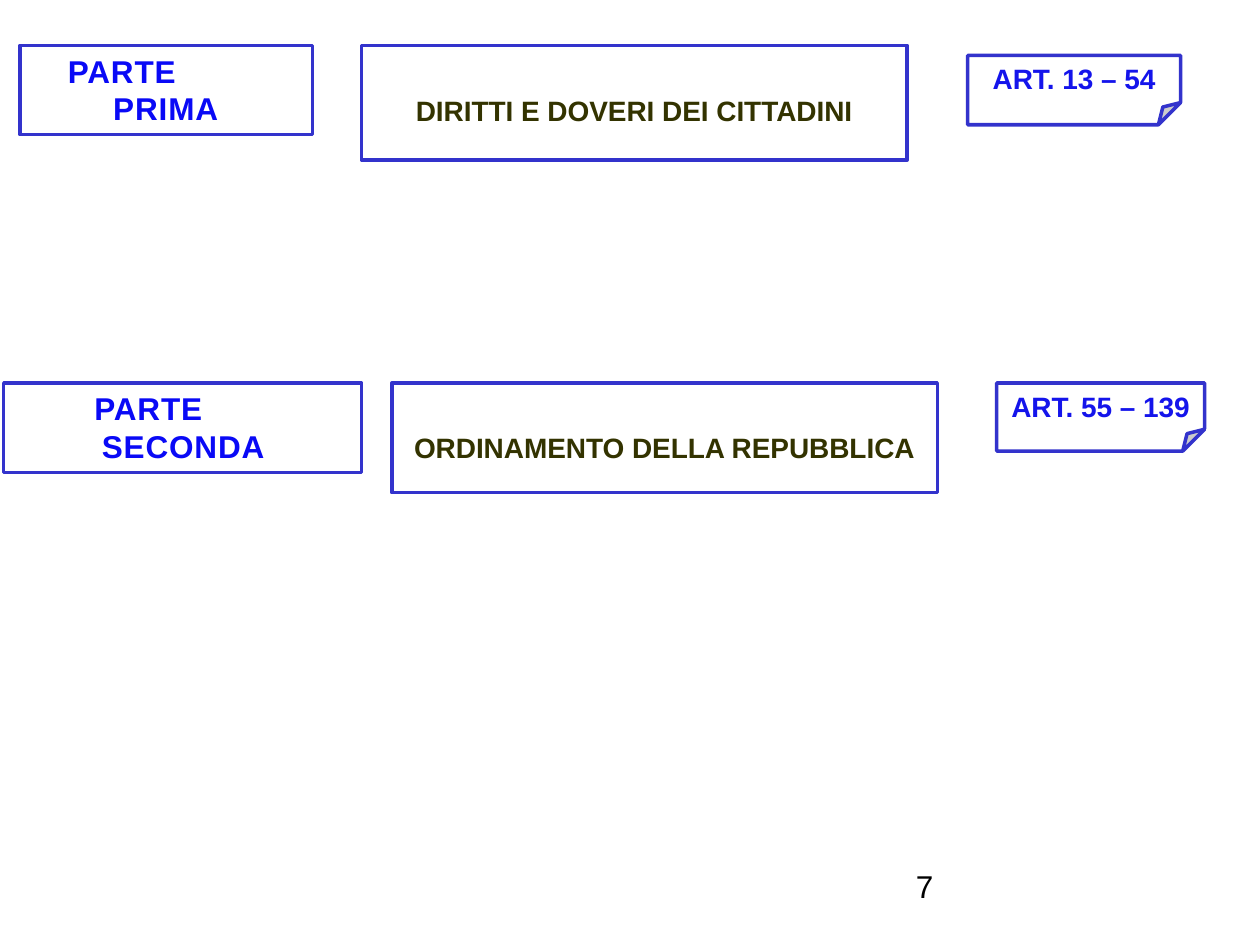
from dataclasses import dataclass

from pptx import Presentation
from pptx import util as u
from pptx.dml import color
from pptx.enum import shapes, text


@dataclass(frozen=True)
class Theme:
    """Colours, type sizes and line width of the deck."""
    font: str = "Arial"
    paper: str = "FFFFFF"
    border: str = "3333CC"
    label: str = "0909F6"
    title: str = "333300"
    article: str = "1414EB"
    number: str = "000000"
    large: int = 18
    medium: int = 16
    line: float = 2


@dataclass(frozen=True)
class Area:
    """Position and size in inches."""
    left: float
    top: float
    width: float
    height: float


@dataclass(frozen=True)
class Part:
    """One part of the Constitution with its three boxes."""
    label: str
    label_area: Area
    first_indent: float
    next_indent: float
    title: str
    title_area: Area
    articles: str
    note_area: Area


THEME = Theme()
TITLE_INSET = 0.38
FOLD = 0.32
PARTS = (
    Part("PARTE\vPRIMA", Area(0.16, 0.36, 2.32, 0.71), 0.28, 0.64,
         "DIRITTI E DOVERI DEI CITTADINI", Area(2.87, 0.36, 4.33, 0.91),
         "ART. 13 – 54", Area(7.68, 0.44, 1.69, 0.55)),
    Part("PARTE\vSECONDA", Area(0.03, 3.04, 2.84, 0.71), 0.62, 0.68,
         "ORDINAMENTO DELLA REPUBBLICA", Area(3.11, 3.04, 4.33, 0.87),
         "ART. 55 – 139", Area(7.91, 3.04, 1.65, 0.54)),
)


def place(area: Area) -> tuple:
    """Return the area as lengths."""
    return tuple(u.Inches(side) for side in (area.left, area.top, area.width, area.height))


def write(box, words: str, *, ink: str, size: int, bold: bool = True,
          align=text.PP_ALIGN.CENTER, inset: float = 0.05, spacing: int = 0):
    """Write one formatted paragraph at the top of a box and return it."""
    frame = box.text_frame
    frame.word_wrap = True
    frame.vertical_anchor = text.MSO_ANCHOR.TOP
    frame.margin_top = u.Inches(inset)
    para = frame.paragraphs[0]
    para.text = words
    para.alignment = align
    for span in para.runs:
        span.font.name = THEME.font
        span.font.size = u.Pt(size)
        span.font.bold = bold
        span.font.color.rgb = color.RGBColor.from_string(ink)
        if spacing:
            span.font._element.set("spc", str(spacing))
    return para


def add_box(page, area: Area, kind=shapes.MSO_SHAPE.RECTANGLE):
    """Add a white box with a blue border."""
    box = page.shapes.add_shape(kind, *place(area))
    box.shadow.inherit = False
    box.fill.solid()
    box.fill.fore_color.rgb = color.RGBColor.from_string(THEME.paper)
    box.line.color.rgb = color.RGBColor.from_string(THEME.border)
    box.line.width = u.Pt(THEME.line)
    return box


def add_part(page, part: Part) -> None:
    """Draw the label, title and article note of a part."""
    para = write(add_box(page, part.label_area), part.label, ink=THEME.label,
                 size=THEME.large, align=text.PP_ALIGN.LEFT, spacing=50)
    layout = para._p.get_or_add_pPr()
    layout.set("marL", str(u.Inches(part.next_indent)))
    layout.set("indent", str(u.Inches(part.first_indent - part.next_indent)))

    write(add_box(page, part.title_area), part.title, ink=THEME.title,
          size=THEME.medium, inset=TITLE_INSET)

    note = add_box(page, part.note_area, shapes.MSO_SHAPE.FOLDED_CORNER)
    note._element.spPr.prstGeom.rewrite_guides([("adj", round(FOLD * 100000))])
    write(note, part.articles, ink=THEME.article, size=THEME.medium)


def main() -> None:
    """Build and save the deck."""
    deck = Presentation()
    deck.slide_width, deck.slide_height = u.Inches(10), u.Inches(7.5)
    page = deck.slides.add_slide(deck.slide_layouts[6])
    for part in PARTS:
        add_part(page, part)
    number = page.shapes.add_textbox(*place(Area(7.17, 6.83, 2.33, 0.52)))
    write(number, "7", ink=THEME.number, size=THEME.large, bold=False,
          align=text.PP_ALIGN.LEFT)
    deck.save("out.pptx")


if __name__ == "__main__":
    main()
